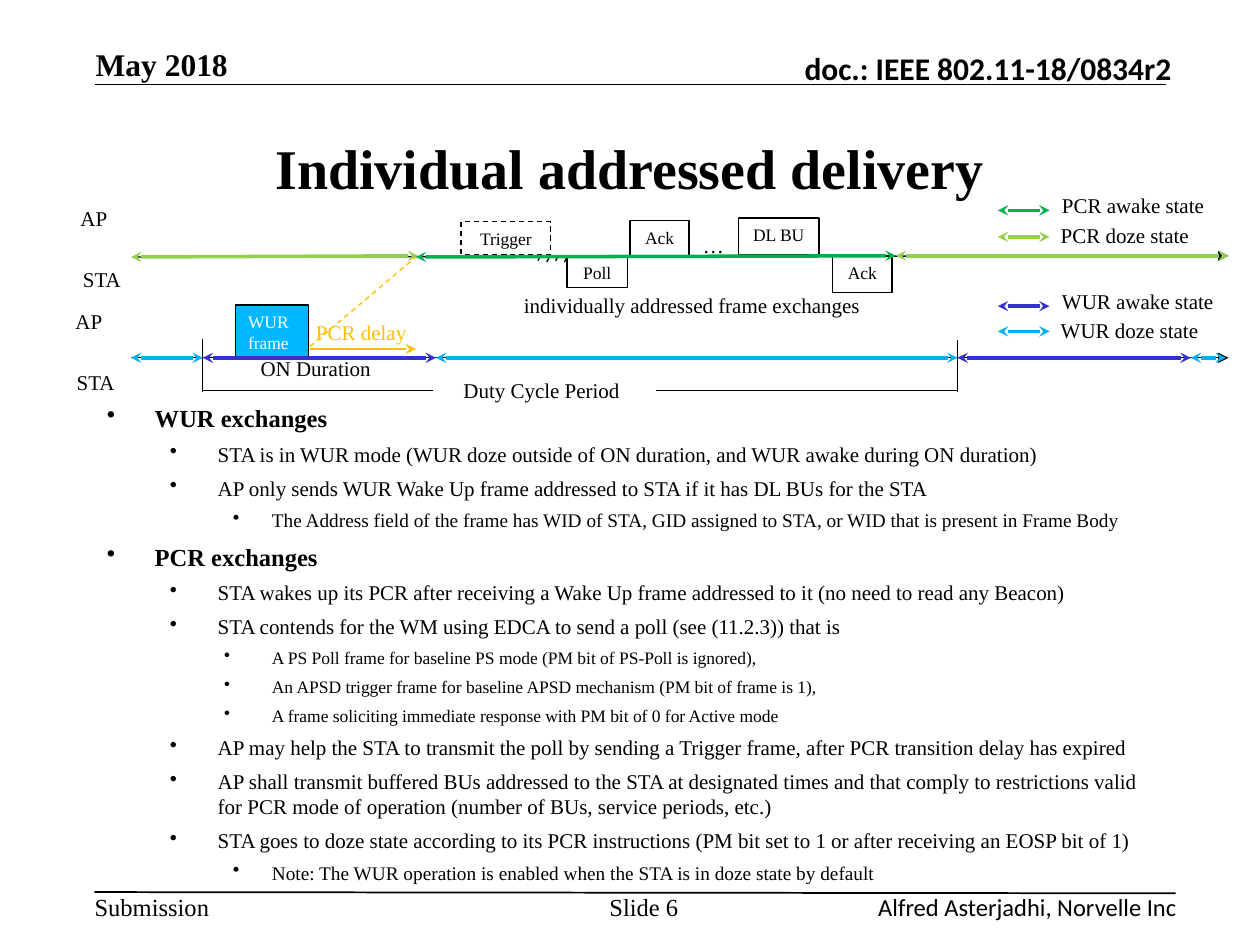
from pptx import Presentation
from pptx.dml.color import RGBColor
from pptx.enum.dml import MSO_LINE
from pptx.enum.shapes import MSO_CONNECTOR, MSO_SHAPE
from pptx.enum.text import MSO_ANCHOR, PP_ALIGN
from pptx.oxml.ns import qn
from pptx.util import Inches, Pt
from lxml import etree

LEFT, CENTER, RIGHT = PP_ALIGN.LEFT, PP_ALIGN.CENTER, PP_ALIGN.RIGHT
TOP, MIDDLE, BOTTOM = MSO_ANCHOR.TOP, MSO_ANCHOR.MIDDLE, MSO_ANCHOR.BOTTOM
STRAIGHT, RECTANGLE, DASH = MSO_CONNECTOR.STRAIGHT, MSO_SHAPE.RECTANGLE, MSO_LINE.DASH

THEME = {
    "serif": "Times New Roman", "sans": "Calibri",
    "ink": "000000", "white": "FFFFFF", "frame": "00B8FF", "delay": "FFC000",
    "PCR awake": "00B050", "PCR doze": "92D050",
    "WUR awake": "3333CC", "WUR doze": "00B0F0",
    "title": 32, "header": 18, "footer": 14, "label": 12, "box": 10,
    "thin": 0.75, "rule": 1, "arrow": 1.25, "state": 2,
}

TITLE = "Individual addressed delivery"
HEADERS = [
    ("May 2018", (0.76, 0.36, 2.05, 0.3), LEFT, "serif"),
    ("doc.: IEEE 802.11-18/0834r2", (5.47, 0.39, 3.83, 0.3), RIGHT, "sans"),
]
FOOTERS = [
    ("Submission", (0.75, 7.08, 0.92, 0.24), LEFT, "serif"),
    ("Slide 6", (4.75, 7.08, 0.72, 0.4), CENTER, "serif"),
    ("Alfred Asterjadhi, Norvelle Inc", (5.86, 7.08, 3.48, 0.2), RIGHT, "sans"),
]
RULES = [(0.75, 0.67, 9.25, 0.67), (0.75, 7.08, 9.33, 7.09)]

BULLETS = [
    (0, 14, "WUR exchanges"),
    (1, 12, "STA is in WUR mode (WUR doze outside of ON duration, and WUR awake during ON duration)"),
    (1, 12, "AP only sends WUR Wake Up frame addressed to STA if it has DL BUs for the STA"),
    (2, 11, "The Address field of the frame has WID of STA, GID assigned to STA, or WID that is present in Frame Body"),
    (0, 14, "PCR exchanges"),
    (1, 12, "STA wakes up its PCR after receiving a Wake Up frame addressed to it (no need to read any Beacon)"),
    (1, 12, "STA contends for the WM using EDCA to send a poll (see (11.2.3)) that is"),
    (2, 10, "A PS Poll frame for baseline PS mode (PM bit of PS-Poll is ignored),"),
    (2, 10, "An APSD trigger frame for baseline APSD mechanism (PM bit of frame is 1),"),
    (2, 10, "A frame soliciting immediate response with PM bit of 0 for Active mode"),
    (1, 12, "AP may help the STA to transmit the poll by sending a Trigger frame, after PCR transition delay has expired"),
    (1, 12, "AP shall transmit buffered BUs addressed to the STA at designated times and that comply to "
            "restrictions valid for PCR mode of operation (number of BUs, service periods, etc.)"),
    (1, 12, "STA goes to doze state according to its PCR instructions (PM bit set to 1 or after receiving an EOSP bit of 1)"),
    (2, 11, "Note: The WUR operation is enabled when the STA is in doze state by default"),
]
MARGINS, SPACES = (0.38, 0.88, 1.31), (6, 5, 4.5)

PCR_Y, WUR_Y, PERIOD_Y = 2.03, 2.84, 3.1
ON_START, ON_END, PERIOD_END = 1.61, 3.46, 7.6
AXES = [(1.06, PCR_Y + 0.01, 9.75, PCR_Y), (1.04, WUR_Y, 9.75, WUR_Y)]
PERIOD_BRACKET = [
    (ON_START, 2.69, ON_START, 3.11), (PERIOD_END, 2.7, PERIOD_END, 3.11),
    (ON_START, PERIOD_Y, 3.44, PERIOD_Y), (5.21, PERIOD_Y, PERIOD_END, PERIOD_Y),
]
STATES = [
    ("WUR awake", ON_START, ON_END, WUR_Y), ("WUR awake", PERIOD_END, 9.45, WUR_Y),
    ("WUR doze", ON_END, PERIOD_END, WUR_Y), ("WUR doze", 9.45, 9.73, WUR_Y),
    ("WUR doze", 1.04, ON_START, WUR_Y), ("PCR awake", 3.3, 7.11, PCR_Y),
    ("PCR doze", 7.11, 9.75, PCR_Y), ("PCR doze", 1.04, 3.32, PCR_Y),
]
LEGEND = [
    ("PCR awake", 1.67, (8.33, 1.48, 1.34)), ("PCR doze", 1.88, (8.32, 1.72, 1.23)),
    ("WUR awake", 2.43, (8.33, 2.24, 1.42)), ("WUR doze", 2.63, (8.32, 2.47, 1.31)),
]
FRAMES = [
    ("Poll", (4.5, PCR_Y, 0.48, 0.25)), ("Ack", (5, 1.75, 0.47, 0.29)),
    ("Trigger", (3.66, 1.76, 0.71, 0.26)), ("DL BU", (5.86, 1.73, 0.64, 0.29)),
    ("Ack", (6.61, PCR_Y, 0.47, 0.29)),
]
LABELS = [
    ("AP", 0.54, 1.58, 0.42, "ink"), ("STA", 0.56, 2.07, 0.51, "ink"),
    ("AP", 0.5, 2.4, 0.42, "ink"), ("STA", 0.51, 2.88, 0.51, "ink"),
    ("Duty Cycle Period", 3.58, 2.95, 1.46, "ink"), ("ON Duration", 1.97, 2.77, 1.09, "ink"),
    ("PCR delay", 2.41, 2.49, 0.93, "delay"), ("…", 5.48, 1.8, 0.37, "ink"),
    ("individually addressed frame exchanges", 4.06, 2.27, 2.92, "ink"),
]


def color(name):
    return RGBColor.from_string(THEME[name])


def style(paragraph, size, ink="ink", face="serif", bold=False, align=LEFT):
    paragraph.alignment = align
    font = paragraph.font
    font.name, font.size, font.bold = THEME[face], Pt(size), bold
    font.color.rgb = color(ink)


def add_text(slide, text, place, size, inset=True, wrap=True, anchor=TOP, **look):
    frame = slide.shapes.add_textbox(*map(Inches, place)).text_frame
    frame.word_wrap, frame.vertical_anchor = wrap, anchor
    if not inset:
        frame.margin_left = frame.margin_right = frame.margin_top = frame.margin_bottom = 0
    frame.text = text
    style(frame.paragraphs[0], size, **look)


def add_line(slide, ends, ink="ink", width="thin", head=None, tail=None, dash=None):
    line = slide.shapes.add_connector(STRAIGHT, *map(Inches, ends))
    line.line.color.rgb, line.line.width = color(ink), Pt(THEME[width])
    if dash:
        line.line.dash_style = dash
    outline = line.line._get_or_add_ln()
    for tag, kind in (("a:headEnd", head), ("a:tailEnd", tail)):
        if kind:
            etree.SubElement(outline, qn(tag), type=kind)
    etree.SubElement(line._element.spPr, qn("a:effectLst"))


def add_state(slide, state, ends):
    add_line(slide, ends, state, "state", "stealth", "stealth")


def add_frame(slide, text, place, fill=None, ink="ink", align=CENTER):
    box = slide.shapes.add_shape(RECTANGLE, *map(Inches, place))
    box.shadow.inherit = False
    if fill:
        box.fill.solid()
        box.fill.fore_color.rgb = color(fill)
    else:
        box.fill.background()
    box.line.color.rgb, box.line.width = color("ink"), Pt(THEME["thin"])
    if text == "Trigger":
        box.line.dash_style = DASH
    box.text_frame.vertical_anchor = TOP
    box.text_frame.text = text
    for paragraph in box.text_frame.paragraphs:
        style(paragraph, THEME["box"], ink, align=align)


def add_bullets(slide):
    frame = slide.shapes.add_textbox(*map(Inches, (0.75, 3.15, 8.5, 3.94))).text_frame
    frame.word_wrap = True
    for index, (level, size, text) in enumerate(BULLETS):
        paragraph = frame.add_paragraph() if index else frame.paragraphs[0]
        paragraph.text, paragraph.level = text, level
        paragraph.space_before = Pt(SPACES[level] if index else 0)
        hanging = 0.31 if size == 11 else 0.38
        properties = paragraph._p.get_or_add_pPr()
        properties.set("marL", str(Inches(MARGINS[level])))
        properties.set("indent", str(-Inches(hanging)))
        etree.SubElement(properties, qn("a:buChar"), char="•")
        style(paragraph, size, bold=level == 0)


def add_timeline(slide):
    for ends in AXES:
        add_line(slide, ends, tail="triangle")
    for text, place in FRAMES:
        add_frame(slide, text, place)
    add_frame(slide, "WUR\nframe", (1.87, 2.42, 0.58, 0.42), "frame", "white", LEFT)
    for ends in PERIOD_BRACKET:
        add_line(slide, ends)
    for index in range(4):
        x, y = 4.29 + 0.07 * index, PCR_Y + 0.01 * (index % 2)
        add_line(slide, (x, y, x - 0.02, y + 0.04))
    for text, x, y, width, ink in LABELS:
        add_text(slide, text, (x, y, width, 0.3), THEME["label"], wrap=False, ink=ink)
    add_line(slide, (2.46, 2.77, 3.3, 2.77), "delay", "arrow", tail="stealth")
    for state, start, end, y in STATES:
        rise = 0.01 if y == PCR_Y and start < PERIOD_END - 0.5 else 0
        add_state(slide, state, (start, y + rise, end, y))
    add_line(slide, (2.46, 2.75, 3.3, 2.04), "delay", dash=DASH)
    for state, y, place in LEGEND:
        add_state(slide, state, (7.92, y, 8.33, y))
        add_text(slide, f"{state} state", (*place, 0.3), THEME["label"], wrap=False)


def main():
    """Build the slide on individually addressed delivery."""
    deck = Presentation()
    deck.slide_width, deck.slide_height = Inches(10), Inches(7.5)
    slide = deck.slides.add_slide(deck.slide_layouts[6])
    for ends in RULES:
        add_line(slide, ends, width="rule")
    for text, place, align, face in HEADERS:
        add_text(slide, text, place, THEME["header"], False, anchor=BOTTOM, face=face, bold=True, align=align)
    for text, place, align, face in FOOTERS:
        add_text(slide, text, place, THEME["footer"], False, face=face, align=align)
    add_text(slide, TITLE, (0.75, 0.75, 8.5, 1.16), THEME["title"], anchor=MIDDLE, bold=True, align=CENTER)
    add_bullets(slide)
    add_timeline(slide)
    deck.save("out.pptx")


if __name__ == "__main__":
    main()
